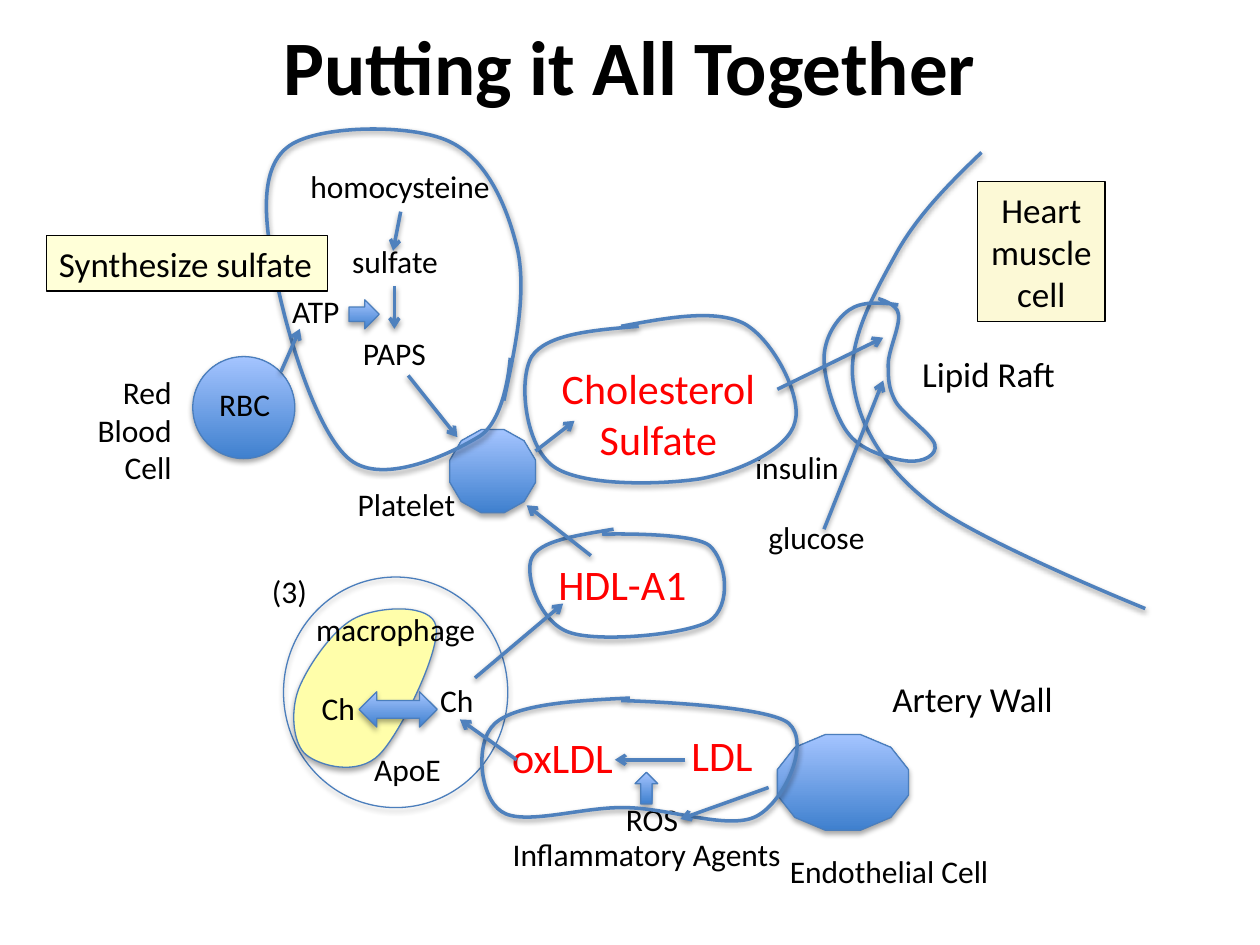
"""Build the sulfate and cholesterol pathway slide on a grid of 0.1 inch cells."""
from pptx import Presentation, util as u
from pptx.dml.color import RGBColor
from pptx.enum import shapes, text
from pptx.oxml import parse_xml
from pptx.oxml.ns import nsdecls, qn

COLS, ROWS = 100, 75
CELL = u.Inches(0.1)
COLORS = {
    "black": "000000", "red": "FF0000", "deep": "3F80CE", "pale": "A4C4FF",
    "edge": "4B7EBC", "stroke": "4F81BD", "lipid": "FFFEAA",
    "heart": "FCF9D6", "sulfate": "FFFFD8",
}
KIND = shapes.MSO_SHAPE
ALIGN = text.PP_ALIGN

TITLE = ("Putting it All Together", 5, -1.1, 90, 12.5)
BLUE_SHAPES = [
    (KIND.OVAL, 15.3, 28.3, 8.1, 8.1),
    (KIND.DODECAGON, 35.7, 34.1, 6.8, 6.6),
    (KIND.DODECAGON, 61.7, 58.3, 10.4, 7.6),
    (KIND.UP_ARROW, 50.4, 61.3, 1.8, 2.5),
    (KIND.LEFT_RIGHT_ARROW, 28.5, 54.9, 6.2, 2.8),
    (KIND.RIGHT_ARROW, 27.7, 23.8, 2.4, 2.3),
]
MACROPHAGE = (22.5, 45.8, 17.8, 18.3)
LIPID_DROP = [
    (28.3, 49), (26.5, 49.8, 24.4, 52.9, 23.7, 54.7),
    (23, 56.6, 23.3, 59.1, 24.3, 59.9), (25.4, 60.8, 28.4, 61.6, 30.1, 59.9),
    (31.8, 58.2, 35, 51.6, 34.6, 49.7), (34.3, 47.9, 30.2, 48.1, 28.3, 49),
]
OUTLINES = {
    "heart cell": [
        (77.9, 12.1), (75.4, 14.5, 72.9, 17, 71.2, 20), (69.5, 23.1, 67.3, 26.9, 67.7, 30.2),
        (68.1, 33.6, 70, 37, 73.9, 40), (77.8, 43, 90.9, 48.3, 90.9, 48.3)],
    "lipid raft": [
        (71.3, 24.2), (69.9, 24, 68.4, 23.9, 67.4, 24.6), (66.4, 25.3, 65.4, 26.8, 65.4, 28.5),
        (65.4, 30.1, 66.3, 33.2, 67.4, 34.5), (68.5, 35.9, 71, 36.5, 72.1, 36.6),
        (73.3, 36.7, 74.4, 36.1, 74.2, 35.3), (74, 34.5, 71.7, 32.9, 71.1, 31.9),
        (70.5, 30.8, 70.5, 30.1, 70.5, 28.9), (70.5, 27.8, 71.5, 25.8, 71.3, 24.9),
        (71.2, 24.1, 69.7, 23.7, 69.7, 23.7)],
    "HDL": [
        (48.7, 42), (45.8, 42.5, 42.8, 42.9, 42.2, 44.3), (41.6, 45.6, 42.8, 49.4, 45.2, 50.2),
        (47.5, 51, 54.4, 50.4, 56.3, 49.3), (58.1, 48.1, 57.7, 44.5, 56.3, 43.3),
        (54.9, 42.2, 47.8, 42.4, 47.8, 42.4)],
    "cholesterol sulfate": [
        (50.7, 25.9), (47.1, 26.2, 43.4, 26.5, 42.2, 28.3), (41.1, 30.2, 41.7, 35.4, 43.9, 37),
        (46.1, 38.6, 52.3, 38.5, 55.6, 38), (58.8, 37.4, 62.6, 35.6, 63.1, 33.5),
        (63.7, 31.5, 61.4, 27, 59.1, 25.7), (56.8, 24.5, 53, 25.2, 49.3, 25.9)],
    "LDL": [
        (50, 55.4), (45.5, 55.6, 41, 55.9, 39.3, 57.4), (37.6, 58.9, 38.1, 63.3, 39.8, 64.4),
        (41.5, 65.6, 46.3, 64, 49.6, 64.1), (53, 64.1, 57.8, 65.9, 60, 64.8),
        (62.2, 63.7, 64.4, 59, 62.6, 57.4), (60.8, 55.9, 49.3, 55.6, 49.3, 55.6)],
    "sulfate synthesis": [
        (40, 31.8), (40.9, 27.6, 41.8, 23.4, 41.1, 19.9), (40.3, 16.5, 38.7, 12.6, 35.6, 11.2),
        (32.6, 9.8, 25, 9.9, 22.8, 11.7), (20.5, 13.5, 21, 17.9, 21.9, 22),
        (22.7, 26.2, 25.1, 34.4, 27.8, 36.5), (30.5, 38.6, 36, 35.9, 38.1, 34.6),
        (40.2, 33.2, 40.5, 28.4, 40.5, 28.4)],
}
ARROWS = [
    (61.7, 30.9, 70.1, 26.8), (65.4, 42, 70.1, 30.2), (37.7, 53.8, 44.7, 47.9),
    (54.4, 60.3, 48.8, 60.3), (61, 62.5, 54, 65), (46.9, 44.1, 41.8, 40.1),
    (32.4, 29.8, 36.3, 34.7), (41, 60.3, 36.5, 57.1), (22.3, 29.5, 23.8, 26.1),
    (31.8, 16.8, 31.2, 19.9), (31.3, 22.7, 31.3, 26.1), (42.5, 35.8, 45.6, 33.4),
]
CENTERED = [
    ("homocysteine", 22.3, 12.8, 18.9, 18), ("sulfate", 21.9, 18.7, 18.9, 18),
    ("PAPS", 27.4, 26, 7.8, 18), ("ROS", 45.6, 63, 12.3, 18),
    ("glucose", 59.5, 40.6, 10.6, 18), ("insulin", 57.1, 35.1, 12.3, 18),
    ("ApoE", 26.2, 59, 12.3, 18), ("macrophage", 22.5, 47.9, 17.8, 18),
    ("Ch", 30.1, 53.6, 12.3, 18), ("Ch", 20.7, 54.2, 12.3, 18),
    ("Artery Wall", 68, 53.3, 18.4, 20),
]
LIPOPROTEINS = [
    ("LDL", 53.4, 57.4, 7.8, 24), ("HDL-A1", 41.1, 43.8, 16.6, 24),
    ("oxLDL", 39.5, 57.6, 10.3, 24), ("Cholesterol Sulfate", 43.5, 28.3, 17.5, 24),
]
ONE_LINERS = [
    ("RBC", 16.4, 30.1, 6.2, 18), ("(3)", 20.6, 44.9, 4.8, 18),
    ("Endothelial Cell", 61.7, 67.1, 17.9, 18), ("Platelet", 27.4, 38, 9.9, 18),
    ("Lipid Raft", 72.2, 27.5, 12.7, 20), ("Inflammatory Agents", 39.7, 65.8, 23.5, 18),
]
ATP = ("ATP", 22.2, 22.7, 7.8, 18)
RED_CELL = ("Red Blood Cell", 3.7, 29.1, 10.9, 18)
CALLOUTS = [
    ("Heart muscle cell", 77.6, 14.4, 10.1, 11.1, "heart", ALIGN.CENTER, True),
    ("Synthesize sulfate", 3.7, 18.7, 22.3, 4.4, "sulfate", ALIGN.LEFT, False),
]


def cells(*values):
    return [round(value * CELL) for value in values]


def rgb(name):
    return RGBColor.from_string(COLORS[name])


def set_line(item, color, width):
    item.line.color.rgb = rgb(color)
    item.line.width = u.Pt(width)


def add_shadow(item, alpha=35, distance=23000):
    item._element.spPr.append(parse_xml(
        f'<a:effectLst {nsdecls("a")}><a:outerShdw blurRad="40000" dist="{distance}" '
        f'dir="5400000" rotWithShape="0"><a:srgbClr val="{COLORS["black"]}">'
        f'<a:alpha val="{alpha * 1000}"/></a:srgbClr></a:outerShdw></a:effectLst>'))


def write(box, words, size, color="black", align=ALIGN.CENTER, wrap=True, bold=False):
    frame = box.text_frame
    frame.text = words
    frame.word_wrap = wrap
    para = frame.paragraphs[0]
    para.alignment = align
    span = para.runs[0]
    span.font.name, span.font.size, span.font.bold = "Calibri", u.Pt(size), bold
    span.font.color.rgb = rgb(color)
    return span


def add_label(page, label, lines=1, **style):
    words, left, top, width, size = label
    height = lines * size / 6 + 1
    box = page.shapes.add_textbox(*cells(left, top, width, height))
    span = write(box, words, size, **style)
    box.text_frame.auto_size = text.MSO_AUTO_SIZE.SHAPE_TO_FIT_TEXT
    return span


def add_lipoprotein(page, label):
    span = add_label(page, label, lines=len(label[0].split()), color="red")
    span._r.get_or_add_rPr().insert(0, parse_xml(
        f'<a:ln {nsdecls("a")} w="9525"><a:solidFill><a:srgbClr val="{COLORS["red"]}"/>'
        '</a:solidFill></a:ln>'))


def add_curve(page, curve, close=False):
    start, *bends = curve
    builder = page.shapes.build_freeform(*cells(*start))
    knots = [cells(*bend[i:i + 2]) for bend in bends for i in (0, 2, 4)]
    builder.add_line_segments(knots, close=close)
    shape = builder.convert_to_shape()
    lines = list(shape._element.iter(qn("a:lnTo")))
    for first, second, third in zip(lines[::3], lines[1::3], lines[2::3]):
        bezier = parse_xml(f'<a:cubicBezTo {nsdecls("a")}/>')
        first.addprevious(bezier)
        for line in (first, second, third):
            bezier.append(line[0])
            line.getparent().remove(line)
    return shape


def add_blue_shape(page, kind, *place):
    shape = page.shapes.add_shape(kind, *cells(*place))
    shape.fill.gradient()
    shape.fill.gradient_angle = 90
    for stop, color in zip(shape.fill.gradient_stops, ("deep", "pale")):
        stop.color.rgb = rgb(color)
    set_line(shape, "edge", 0.75)
    add_shadow(shape)


def add_arrow(page, *ends):
    arrow = page.shapes.add_connector(shapes.MSO_CONNECTOR.STRAIGHT, *cells(*ends))
    set_line(arrow, "stroke", 2)
    arrow._element.spPr.find(qn("a:ln")).append(
        parse_xml(f'<a:tailEnd {nsdecls("a")} type="arrow"/>'))
    add_shadow(arrow, 38, 20000)


def main():
    deck = Presentation()
    deck.slide_width, deck.slide_height = cells(COLS, ROWS)
    page = deck.slides.add_slide(deck.slide_layouts[5])
    title = page.shapes.title
    title.left, title.top, title.width, title.height = cells(*TITLE[1:])
    write(title, TITLE[0], 44, bold=True)
    title.text_frame.vertical_anchor = text.MSO_ANCHOR.MIDDLE

    macrophage = page.shapes.add_shape(KIND.OVAL, *cells(*MACROPHAGE))
    macrophage.fill.background()
    drop = add_curve(page, LIPID_DROP, close=True)
    drop.fill.solid()
    drop.fill.fore_color.rgb = rgb("lipid")
    for shape in (macrophage, drop):
        set_line(shape, "edge", 0.75)
        add_shadow(shape)
    for shape in BLUE_SHAPES:
        add_blue_shape(page, *shape)

    for label in CENTERED:
        add_label(page, label)
    for label in LIPOPROTEINS:
        add_lipoprotein(page, label)
    for label in ONE_LINERS:
        add_label(page, label, align=ALIGN.LEFT, wrap=False)
    add_label(page, ATP, align=ALIGN.LEFT)
    add_label(page, RED_CELL, lines=3, align=ALIGN.RIGHT)

    for curve in OUTLINES.values():
        outline = add_curve(page, curve)
        outline.fill.background()
        set_line(outline, "stroke", 2)
        add_shadow(outline, 38, 20000)
    for ends in ARROWS:
        add_arrow(page, *ends)
    for words, left, top, width, height, fill, align, wrap in CALLOUTS:
        box = page.shapes.add_shape(KIND.RECTANGLE, *cells(left, top, width, height))
        box.fill.solid()
        box.fill.fore_color.rgb = rgb(fill)
        set_line(box, "black", 0.75)
        box.shadow.inherit = False
        write(box, words, 20, align=align, wrap=wrap)
        box.text_frame.auto_size = text.MSO_AUTO_SIZE.SHAPE_TO_FIT_TEXT
    deck.save("out.pptx")


if __name__ == "__main__":
    main()
